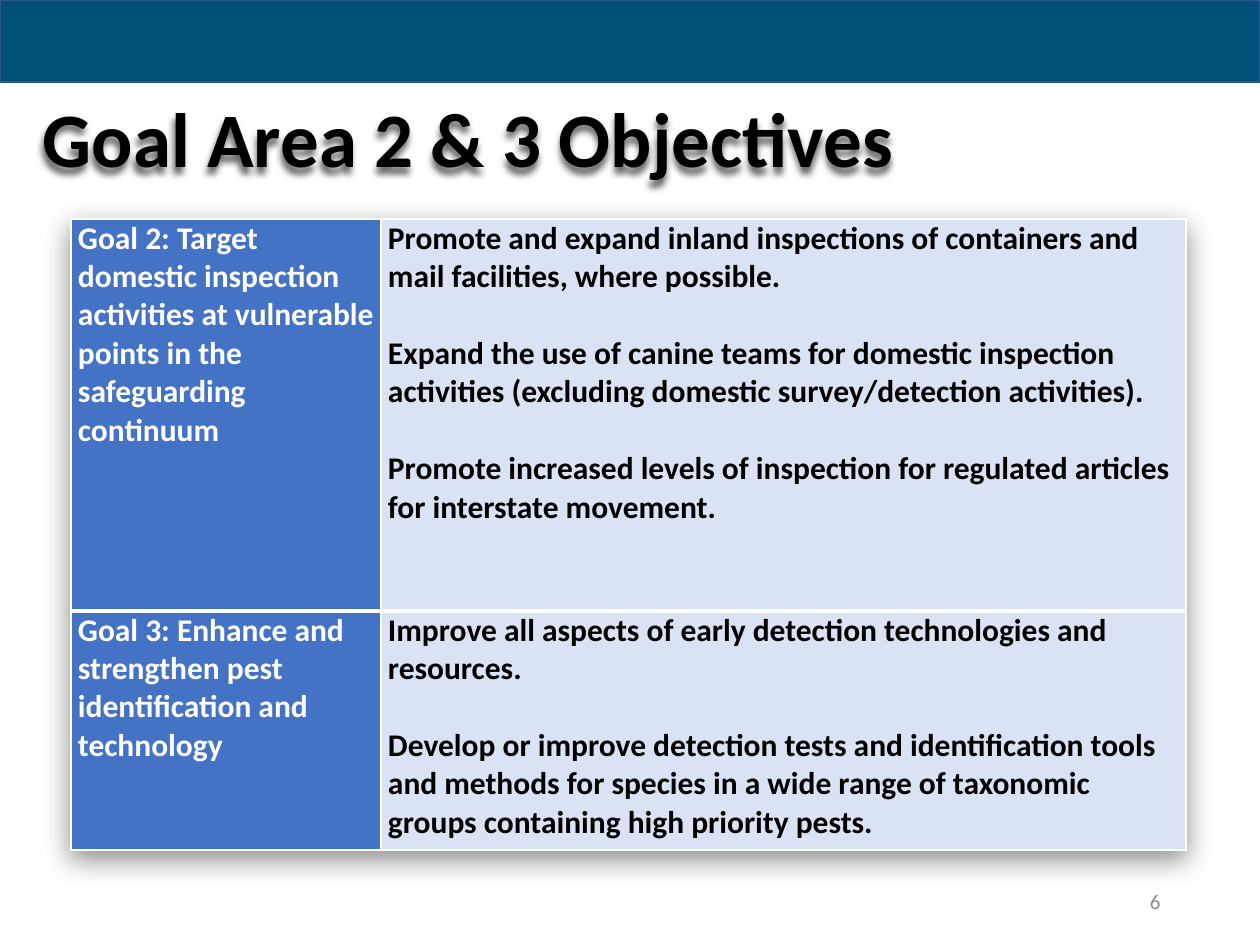
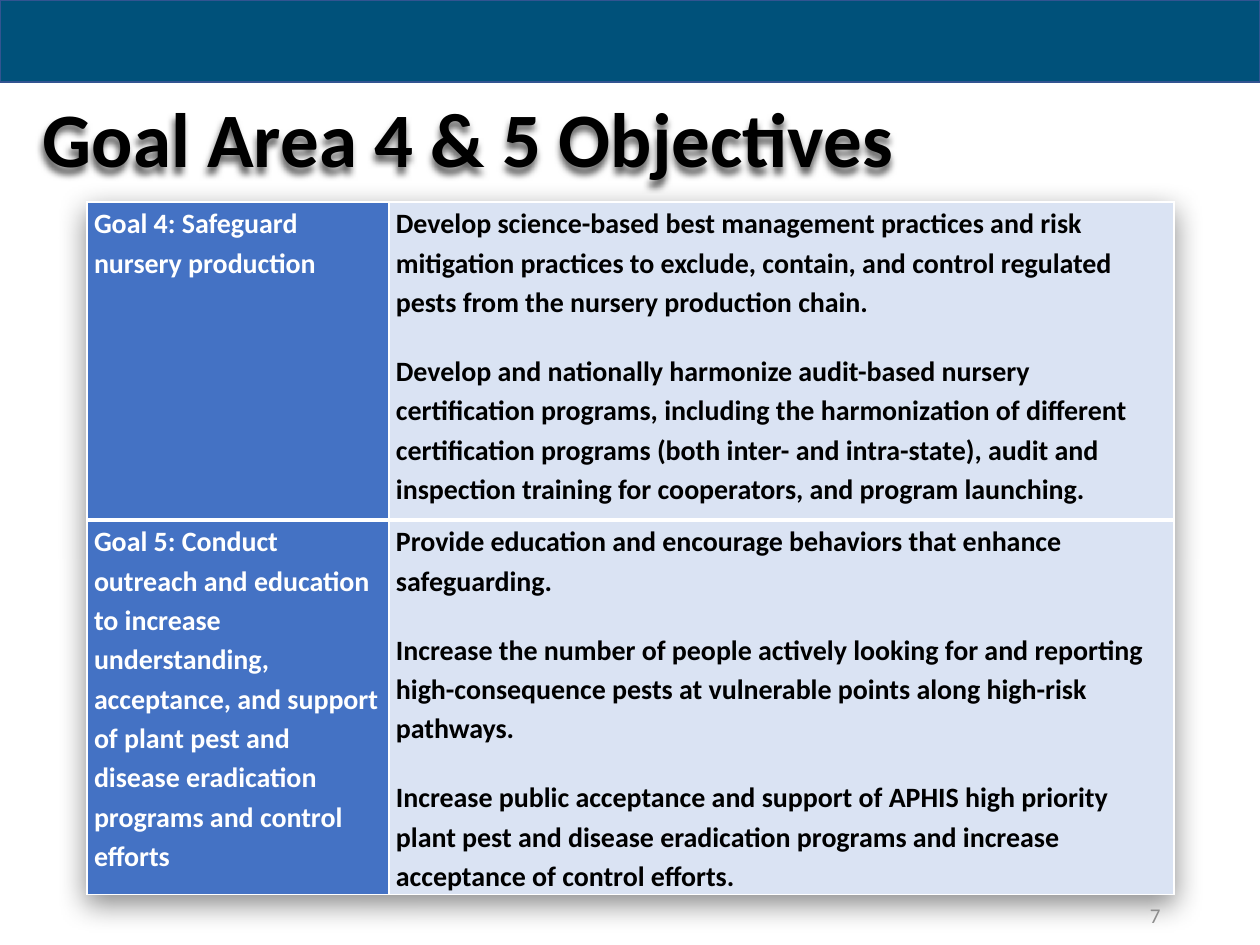
"""Builds two slides of goal areas with their objectives in tables."""
from lxml.etree import SubElement
from pptx import Presentation
from pptx.dml.color import RGBColor
from pptx.enum.shapes import MSO_SHAPE
from pptx.enum.text import MSO_ANCHOR, MSO_AUTO_SIZE, PP_ALIGN
from pptx.oxml.ns import qn
from pptx.util import Emu, Pt

PIXELS_PER_INCH = 126
BAND, BAND_LINE = "00517A", "325491"
GOAL_FILL, OBJECTIVE_FILL = "4472C4", "DAE3F3"
BLACK, WHITE, GREY = "000000", "FFFFFF", "8C8C8C"
CELL_INSET = 7
TITLE_SHADOW = {"blur": 6, "distance": 6, "degrees": 110, "opacity": 60}
TABLE_SHADOW = {"blur": 28, "distance": 9, "degrees": 90, "opacity": 45}

SLIDES = [
    {
        "title": "Goal Area 2 & 3 Objectives",
        "number": ("6", 876),
        "corner": (71, 219), "columns": (310, 805), "rows": (392, 239),
        "size": 18, "line_spacing": 1.0, "gap": 22,
        "goals": [
            ("Goal 2: Target domestic inspection activities at vulnerable points in the "
             "safeguarding continuum",
             ["Promote and expand inland inspections of containers and mail facilities, "
              "where possible.",
              "Expand the use of canine teams for domestic inspection activities "
              "(excluding domestic survey/detection activities).",
              "Promote increased levels of inspection for regulated articles for "
              "interstate movement."]),
            ("Goal 3: Enhance and strengthen pest identification and technology",
             ["Improve all aspects of early detection technologies and resources.",
              "Develop or improve detection tests and identification tools and methods "
              "for species in a wide range of taxonomic groups containing high priority "
              "pests."]),
        ],
    },
    {
        "title": "Goal Area 4 & 5 Objectives",
        "number": ("7", 890),
        "corner": (87, 202), "columns": (302, 785), "rows": (318, 374),
        "size": 16, "line_spacing": 1.15, "gap": 17,
        "goals": [
            ("Goal 4: Safeguard nursery production",
             ["Develop science-based best management practices and risk mitigation "
              "practices to exclude, contain, and control regulated pests from the "
              "nursery production chain.",
              "Develop and nationally harmonize audit-based nursery certification "
              "programs, including the harmonization of different certification programs "
              "(both inter- and intra-state), audit and inspection training for "
              "cooperators, and program launching."]),
            ("Goal 5: Conduct outreach and education to increase understanding, "
             "acceptance, and support of plant pest and disease eradication programs and "
             "control efforts",
             ["Provide education and encourage behaviors that enhance safeguarding.",
              "Increase the number of people actively looking for and reporting "
              "high-consequence pests at vulnerable points along high-risk pathways.",
              "Increase public acceptance and support of APHIS high priority plant pest "
              "and disease eradication programs and increase acceptance of control "
              "efforts."]),
        ],
    },
]


def px(length):
    """Turn pixels into EMU."""
    return Emu(round(length * 914400 / PIXELS_PER_INCH))


def color(value):
    """Turn a hex string into a colour."""
    return RGBColor.from_string(value)


def apply(target, values):
    """Set every attribute named in a dict."""
    for name, value in values.items():
        setattr(target, name, value)


def write(frame, texts, size, ink, bold=False, gap=0, **layout):
    """Fill a text frame with one paragraph per text."""
    for index, text in enumerate(texts):
        para = frame.paragraphs[0] if index == 0 else frame.add_paragraph()
        span = para.add_run()
        span.text = text
        apply(para, layout)
        if index:
            para.space_before = Pt(gap)
        apply(span.font, {"name": "Calibri", "size": Pt(size), "bold": bold})
        span.font.color.rgb = color(ink)


def add_shadow(parent, position, blur, distance, degrees, opacity):
    """Give a properties element a soft black outer shadow."""
    effects = SubElement(parent, qn("a:effectLst"))
    parent.insert(position, effects)
    shadow = SubElement(effects, qn("a:outerShdw"), blurRad=str(px(blur)),
                        dist=str(px(distance)), dir=str(degrees * 60000),
                        algn="ctr", rotWithShape="0")
    tint = SubElement(shadow, qn("a:srgbClr"), val=BLACK)
    SubElement(tint, qn("a:alpha"), val=str(opacity * 1000))


def set_borders(cell, widths):
    """Draw white cell borders of the given point widths."""
    properties = cell._tc.get_or_add_tcPr()
    for position, (side, width) in enumerate(widths.items()):
        line = SubElement(properties, qn(f"a:ln{side}"), w=str(Pt(width)))
        fill = SubElement(line, qn("a:solidFill"))
        SubElement(fill, qn("a:srgbClr"), val=WHITE)
        properties.insert(position, line)


def add_band(page, layout):
    """Draw the top band and place it on the shared layout."""
    band = page.shapes.add_shape(MSO_SHAPE.RECTANGLE, 0, 0, px(1260), px(82))
    band.shadow.inherit = False
    band.fill.solid()
    band.fill.fore_color.rgb = color(BAND)
    band.line.color.rgb = color(BAND_LINE)
    band.line.width = Pt(1)
    layout.shapes._spTree.append(band._element)


def add_title(page, text):
    """Place and format the slide title."""
    title = page.shapes.title
    apply(title, {"left": px(30), "top": px(93), "width": px(1196), "height": px(100)})
    apply(title.text_frame, {"vertical_anchor": MSO_ANCHOR.MIDDLE, "word_wrap": True,
                             "auto_size": MSO_AUTO_SIZE.NONE})
    write(title.text_frame, [text], 44, BLACK, bold=True,
          alignment=PP_ALIGN.LEFT, line_spacing=0.9)
    properties = title._element.spPr
    add_shadow(properties, len(properties), **TITLE_SHADOW)


def add_goals(page, content):
    """Add the table of goals and objectives."""
    columns, rows = content["columns"], content["rows"]
    left, top = content["corner"]
    table = page.shapes.add_table(len(rows), len(columns), px(left), px(top),
                                  px(sum(columns)), px(sum(rows))).table
    apply(table, {"first_row": False, "horz_banding": False})
    add_shadow(table._tbl.tblPr, 0, **TABLE_SHADOW)
    for column, width in zip(table.columns, columns):
        column.width = px(width)
    for index, (goal, objectives) in enumerate(content["goals"]):
        row = table.rows[index]
        row.height = px(rows[index])
        borders = {"L": 1, "R": 1, "T": 3 if index else 1, "B": 1 if index else 3}
        parts = [([goal], GOAL_FILL, WHITE), (objectives, OBJECTIVE_FILL, BLACK)]
        for cell, (texts, fill, ink) in zip(row.cells, parts):
            apply(cell, {"margin_left": px(CELL_INSET), "margin_right": px(CELL_INSET),
                         "margin_top": 0, "margin_bottom": 0})
            cell.fill.solid()
            cell.fill.fore_color.rgb = color(fill)
            set_borders(cell, borders)
            write(cell.text_frame, texts, content["size"], ink, bold=True,
                  gap=content["gap"], line_spacing=content["line_spacing"])


def add_number(page, text, top):
    """Add the slide number at the lower right."""
    box = page.shapes.add_textbox(px(890), px(top), px(283), px(50))
    apply(box.text_frame, {"word_wrap": True, "vertical_anchor": MSO_ANCHOR.MIDDLE})
    write(box.text_frame, [text], 12, GREY, alignment=PP_ALIGN.RIGHT)


def main():
    """Build and save the deck."""
    deck = Presentation()
    apply(deck, {"slide_width": px(1260), "slide_height": px(945)})
    layout = deck.slide_layouts.get_by_name("Title Only")
    for index, content in enumerate(SLIDES):
        page = deck.slides.add_slide(layout)
        if index == 0:
            add_band(page, layout)
        add_title(page, content["title"])
        add_goals(page, content)
        add_number(page, *content["number"])
    deck.save("out.pptx")


if __name__ == "__main__":
    main()
